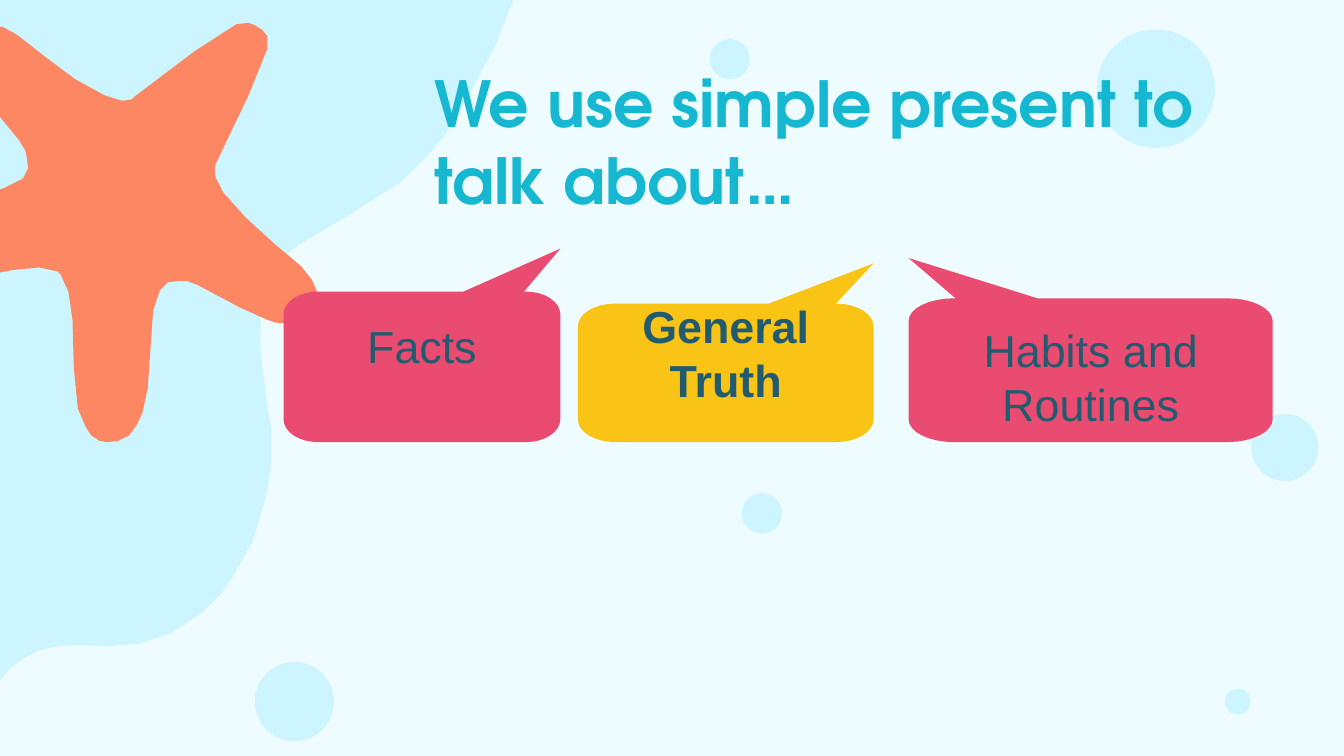
import math
from dataclasses import dataclass

from pptx import Presentation
from pptx import util as u
from pptx.dml import color
from pptx.enum import shapes, text


@dataclass(frozen=True)
class Theme:
    """Colours, fonts and type sizes of the deck."""

    background: str = "EEFCFF"
    water: str = "CCF5FF"
    star: str = "FE8763"
    pink: str = "EA4B70"
    yellow: str = "F9C415"
    heading: str = "16B7D1"
    label: str = "215B6F"
    heading_font: str = "TeX Gyre Adventor"
    label_font: str = "Arial"
    heading_size: int = 34
    label_size: int = 24


THEME = Theme()

BUBBLES = [
    (2.19, 5.22, 0.59), (9.56, 3.33, 0.5), (5.67, 3.82, 0.3),
    (8.6, 0.66, 0.88), (5.43, 0.44, 0.3), (9.21, 5.22, 0.19),
]

WAVE = [
    (-1.65, -2.92), (-1.71, -2.47), (-1.59, -1.66), (-1.46, -0.89), (-1.49, -0.51),
    (-1.67, -0.19), (-1.94, -0.02), (-2.37, 0.26), (-2.86, 0.83), (-3.13, 1.41),
    (-3.19, 1.91), (-3.06, 2.29), (-2.8, 2.55), (-2.13, 2.85), (-1.89, 3.13),
    (-1.86, 3.4), (-1.98, 3.82), (-2.25, 4.43), (-2.41, 4.89), (-2.44, 5.12),
    (-2.37, 5.43), (-2.21, 5.69), (-1.94, 5.92), (-1.6, 6.04), (-1.37, 6.07),
    (-0.91, 6), (-0.5, 5.75), (-0.26, 5.43), (-0.16, 5.28), (-0.02, 5.09),
    (0.07, 4.98), (0.17, 4.9), (0.29, 4.84), (0.42, 4.81), (0.58, 4.8),
    (0.79, 4.81), (1.04, 4.79), (1.28, 4.71), (1.5, 4.56), (1.66, 4.4),
    (1.75, 4.26), (1.88, 4.03), (1.98, 3.7), (2.02, 3.44), (2.02, 3.19),
    (1.99, 3.01), (1.94, 2.63), (1.94, 2.34), (1.98, 2.16), (2.05, 1.99),
    (2.18, 1.85), (2.26, 1.8), (2.58, 1.61), (2.99, 1.35), (3.18, 1.16),
    (3.3, 1.02), (3.36, 0.93), (3.49, 0.71), (3.69, 0.33), (3.8, 0.05),
    (3.9, -0.24), (3.97, -0.82), (3.9, -1.2), (3.7, -1.49), (3.42, -1.65),
    (2.86, -1.72), (2.13, -1.62), (1.46, -1.52), (1.15, -1.59), (1, -1.8),
    (0.98, -2.04), (1, -2.66), (0.9, -3.1), (0.63, -3.45), (0.34, -3.66),
    (0.02, -3.79), (-0.33, -3.84), (-0.85, -3.75), (-1.17, -3.58), (-1.45, -3.31),
]

STARFISH = [
    (1.85, 0.17), (1.76, 0.18), (1.45, 0.38), (1, 0.72), (0.98, 0.74),
    (0.91, 0.75), (0.78, 0.71), (0.56, 0.59), (0.32, 0.41), (0.13, 0.26),
    (0.02, 0.2), (-0.09, 0.19), (-0.17, 0.21), (-0.23, 0.26), (-0.28, 0.42),
    (-0.21, 0.58), (-0.09, 0.76), (0.14, 1.04), (0.19, 1.12), (0.2, 1.17),
    (0.21, 1.25), (0.17, 1.33), (0.03, 1.4), (-0.09, 1.44), (-0.53, 1.57),
    (-0.79, 1.7), (-0.87, 1.85), (-0.84, 2), (-0.72, 2.08), (-0.57, 2.1),
    (-0.27, 2.08), (0.09, 2.01), (0.29, 1.99), (0.43, 2.02), (0.45, 2.04),
    (0.51, 2.17), (0.54, 2.38), (0.55, 2.74), (0.58, 3.04), (0.64, 3.18),
    (0.68, 3.24), (0.74, 3.28), (0.8, 3.29), (0.88, 3.28), (0.96, 3.24),
    (1.02, 3.16), (1.06, 3.07), (1.1, 2.89), (1.12, 2.6), (1.14, 2.31),
    (1.19, 2.16), (1.25, 2.1), (1.34, 2.09), (1.39, 2.09), (1.47, 2.12),
    (1.79, 2.29), (1.99, 2.38), (2.05, 2.4), (2.17, 2.41), (2.25, 2.38),
    (2.32, 2.33), (2.35, 2.26), (2.36, 2.17), (2.32, 2.08), (2.24, 1.98),
    (2.05, 1.82), (1.83, 1.62), (1.66, 1.43), (1.6, 1.31), (1.6, 1.24),
    (1.61, 1.21), (1.85, 0.71), (1.99, 0.36), (1.99, 0.27), (1.95, 0.22),
    (1.9, 0.19),
]


def set_all(target, values):
    """Set each named attribute of the target."""
    for name, value in values.items():
        setattr(target, name, value)


def paint(shape, fill):
    """Give a shape a flat fill without line or shadow."""
    shape.shadow.inherit = False
    shape.fill.solid()
    shape.fill.fore_color.rgb = color.RGBColor.from_string(fill)
    shape.line.fill.background()


def write(shape, wording, frame_format, align, font_format, ink):
    """Write one formatted paragraph into a shape."""
    frame = shape.text_frame
    set_all(frame, {"word_wrap": True, "auto_size": text.MSO_AUTO_SIZE.NONE, **frame_format})
    para = frame.paragraphs[0]
    para.alignment = align
    span = para.add_run()
    span.text = wording
    set_all(span.font, font_format)
    span.font.color.rgb = color.RGBColor.from_string(ink)


def add_bubble(page, center_x, center_y, size):
    """Add a round water bubble."""
    bubble = page.shapes.add_shape(
        shapes.MSO_SHAPE.OVAL, u.Inches(center_x - size / 2), u.Inches(center_y - size / 2),
        u.Inches(size), u.Inches(size))
    paint(bubble, THEME.water)


def add_outline(page, points, fill):
    """Add a closed polygon through points given in inches."""
    start, *rest = [(u.Inches(x), u.Inches(y)) for x, y in points]
    builder = page.shapes.build_freeform(*start)
    builder.add_line_segments(rest, close=True)
    shape = builder.convert_to_shape()
    paint(shape, fill)
    return shape


def corner(center_x, center_y, radius_x, radius_y, start, steps=8):
    """Return the points of a clockwise quarter ellipse."""
    angles = [math.radians(start + 90 * step / steps) for step in range(steps + 1)]
    return [(center_x + radius_x * math.cos(a), center_y + radius_y * math.sin(a)) for a in angles]


def add_callout(page, wording, fill, left, top, right, tail, bold=None, inset=0.05):
    """Add a rounded speech bubble whose tail rises from its top edge."""
    bottom, radius_x, radius_y = 3.29, (right - left) / 8, 0.17
    near, far = left + radius_x, right - radius_x
    high, low = top + radius_y, bottom - radius_y
    base_start, tip, base_end = tail
    points = corner(near, high, radius_x, radius_y, 180)
    points += [(base_start, top), tip, (base_end, top)]
    for x, y, start in [(far, high, 270), (far, low, 0), (near, low, 90)]:
        points += corner(x, y, radius_x, radius_y, start)
    callout = add_outline(page, points, fill)
    write(callout, wording,
          {"vertical_anchor": text.MSO_ANCHOR.MIDDLE, "margin_top": u.Inches(inset)},
          text.PP_ALIGN.CENTER,
          {"name": THEME.label_font, "size": u.Pt(THEME.label_size), "bold": bold}, THEME.label)


def add_title(page, wording):
    """Place the title placeholder above the shapes drawn so far."""
    title = page.shapes.title
    title.element.getparent().append(title.element)
    set_all(title, {"left": u.Inches(3.13), "top": u.Inches(0.38),
                    "width": u.Inches(6.13), "height": u.Inches(1.3)})
    margins = {f"margin_{side}": u.Inches(0.1) for side in ("left", "top", "right", "bottom")}
    write(title, wording, {"vertical_anchor": text.MSO_ANCHOR.TOP, **margins},
          text.PP_ALIGN.LEFT,
          {"name": THEME.heading_font, "size": u.Pt(THEME.heading_size), "bold": True},
          THEME.heading)


def main():
    """Build and save the deck."""
    deck = Presentation()
    set_all(deck, {"slide_width": u.Inches(10), "slide_height": u.Inches(10 * 9 / 16)})
    page = deck.slides.add_slide(deck.slide_layouts[5])
    page.background.fill.solid()
    page.background.fill.fore_color.rgb = color.RGBColor.from_string(THEME.background)
    for bubble in BUBBLES:
        add_bubble(page, *bubble)
    add_outline(page, WAVE, THEME.water)
    add_title(page, "We use simple present to talk about…")
    add_outline(page, STARFISH, THEME.star)
    add_callout(page, "General Truth", THEME.yellow, 4.3, 2.26, 6.5,
                (5.72, (6.5, 1.96), 6.22), bold=True)
    add_callout(page, "Facts", THEME.pink, 2.11, 2.17, 4.17, (3.45, (4.17, 1.85), 3.9))
    add_callout(page, "Habits and Routines", THEME.pink, 6.76, 2.22, 9.47,
                (7.11, (6.76, 1.92), 7.72), inset=0.44)
    deck.save("out.pptx")


if __name__ == "__main__":
    main()
